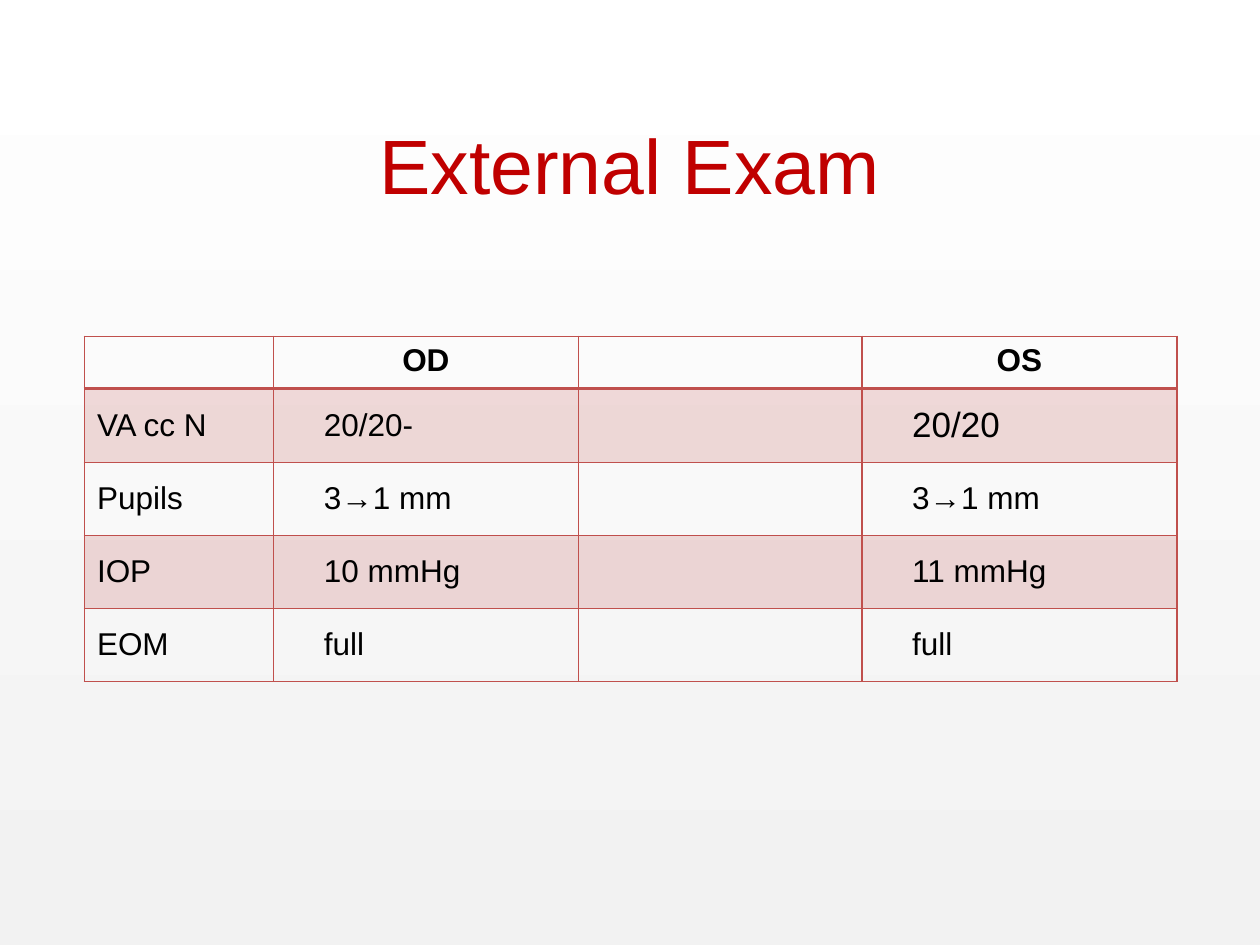
"""Build the External Exam slide with its findings table."""
from lxml import etree
from pptx import Presentation
from pptx.dml.color import RGBColor
from pptx.enum.shapes import MSO_SHAPE
from pptx.enum.text import MSO_ANCHOR, PP_ALIGN
from pptx.oxml.ns import qn
from pptx.util import Inches, Pt

RECTANGLE = MSO_SHAPE.RECTANGLE
MIDDLE, TOP = MSO_ANCHOR.MIDDLE, MSO_ANCHOR.TOP
CENTER, LEFT = PP_ALIGN.CENTER, PP_ALIGN.LEFT

RED = RGBColor(0xC0, 0x00, 0x00)
BRICK = RGBColor(0xC0, 0x50, 0x4D)
BLACK = RGBColor(0x00, 0x00, 0x00)
WHITE = RGBColor(0xFF, 0xFF, 0xFF)
PALE_GRAY = RGBColor(0xF2, 0xF2, 0xF2)

FONT = "Arial"
TITLE = "External Exam"
FINDINGS = [
    ("", "OD", "", "OS"),
    ("VA cc N", "20/20-", "", "20/20"),
    ("Pupils", "3→1 mm", "", "3→1 mm"),
    ("IOP", "10 mmHg", "", "11 mmHg"),
    ("EOM", "full", "", "full"),
]
COLUMN_WIDTHS = [1.5, 2.42, 2.25, 2.5]
ROW_HEIGHTS = [0.41, 0.59, 0.58, 0.58, 0.58]
LARGER_CELL = (1, 3)


def style_text(paragraph, size, color, alignment, bold=False):
    paragraph.alignment = alignment
    font = paragraph.font
    font.name, font.size, font.bold = FONT, Pt(size), bold
    font.color.rgb = color


def add_solid_fill(parent, color):
    fill = etree.SubElement(parent, qn("a:solidFill"))
    return etree.SubElement(fill, qn("a:srgbClr"), val=str(color))


def set_borders(cell, widths):
    properties = cell._tc.get_or_add_tcPr()
    for side, width in widths.items():
        line = etree.SubElement(properties, qn(f"a:ln{side}"), w=str(Pt(width)))
        add_solid_fill(line, BRICK)


def fill_cell(cell, shaded):
    if shaded:
        color = add_solid_fill(cell._tc.get_or_add_tcPr(), BRICK)
        etree.SubElement(color, qn("a:alpha"), val="20000")
    else:
        cell.fill.background()


def add_background(slide, width, height):
    background = slide.shapes.add_shape(RECTANGLE, 0, 0, width, height)
    background.shadow.inherit = False
    background.line.fill.background()
    background.fill.gradient()
    background.fill.gradient_angle = 90
    for stop, color in zip(background.fill.gradient_stops, (PALE_GRAY, WHITE)):
        stop.color.rgb = color


def add_title(slide):
    title = slide.shapes.add_textbox(Inches(0.5), Inches(0.67), Inches(9), Inches(1.25))
    frame = title.text_frame
    frame.word_wrap = True
    frame.vertical_anchor = MIDDLE
    frame.text = TITLE
    style_text(frame.paragraphs[0], 44, RED, CENTER)


def add_findings(slide):
    table = slide.shapes.add_table(
        len(FINDINGS), len(COLUMN_WIDTHS), Inches(0.67), Inches(2.67),
        Inches(sum(COLUMN_WIDTHS)), Inches(sum(ROW_HEIGHTS))).table
    table.first_row = table.horz_banding = False
    for column, width in zip(table.columns, COLUMN_WIDTHS):
        column.width = Inches(width)
    for row, height in zip(table.rows, ROW_HEIGHTS):
        row.height = Inches(height)

    for row, texts in enumerate(FINDINGS):
        header = row == 0
        for column, text in enumerate(texts):
            cell = table.cell(row, column)
            set_borders(cell, {"L": 1, "R": 1, "T": 2 if row == 1 else 1,
                               "B": 2 if header else 1})
            fill_cell(cell, row % 2 == 1)
            cell.vertical_anchor = TOP if header else MIDDLE
            if text and column and not header:
                cell.margin_left = Inches(0.4)
            cell.text = text
            size = 20 if (row, column) == LARGER_CELL else 18
            style_text(cell.text_frame.paragraphs[0], size, BLACK,
                       CENTER if header else LEFT, header)


def main():
    presentation = Presentation()
    presentation.slide_width, presentation.slide_height = Inches(10), Inches(7.5)
    slide = presentation.slides.add_slide(presentation.slide_layouts[6])
    add_background(slide, presentation.slide_width, presentation.slide_height)
    add_findings(slide)
    add_title(slide)
    presentation.save("out.pptx")


if __name__ == "__main__":
    main()
